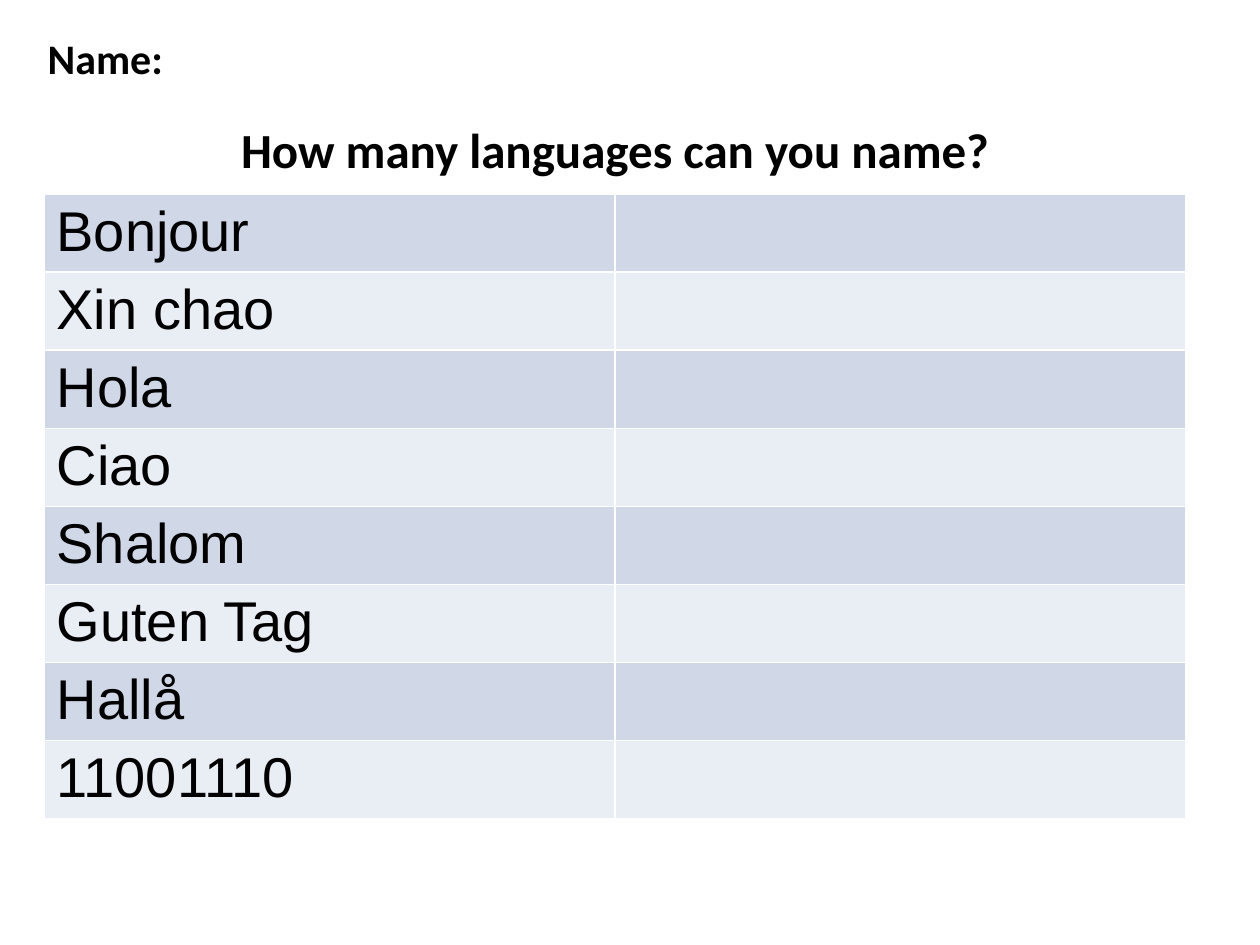
from pptx import Presentation
from pptx.dml.color import RGBColor
from pptx.enum.text import MSO_AUTO_SIZE, PP_ALIGN
from pptx.util import Inches, Pt

COLORS = {"text": "000000", "dark": "D0D8E8", "light": "E9EDF4"}
GREETINGS = ["Bonjour", "Xin chao", "Hola", "Ciao", "Shalom",
             "Guten Tag", "Hallå", "11001110"]


def write(tf, text, size, font, bold):
    tf.text = text
    p = tf.paragraphs[0]
    r = p.runs[0]
    r.font.size = Pt(size)
    r.font.name = font
    r.font.bold = bold
    r.font.color.rgb = RGBColor.from_string(COLORS["text"])
    return p


prs = Presentation()
prs.slide_width = Inches(10)
prs.slide_height = Inches(7.5)
s = prs.slides.add_slide(prs.slide_layouts[6])

rows = len(GREETINGS) + 1
row_height = Inches(0.62)
table = s.shapes.add_table(rows, 2, Inches(0.35), Inches(0.92),
                           Inches(9.06), row_height * rows).table
for row in table.rows:
    row.height = row_height

title = table.cell(0, 0)
title.merge(table.cell(0, 1))
title.fill.background()
p = write(title.text_frame, "How many languages can you name?", 28, "Calibri", True)
p.alignment = PP_ALIGN.CENTER

for i, greeting in enumerate(GREETINGS, start=1):
    write(table.cell(i, 0).text_frame, greeting, 32, "Arial", False)
    for cell in table.rows[i].cells:
        cell.fill.solid()
        cell.fill.fore_color.rgb = RGBColor.from_string(
            COLORS["dark" if i % 2 else "light"])

sp = s.shapes.add_textbox(Inches(0.28), Inches(0.21), Inches(2.68), Inches(0.5))
tf = sp.text_frame
tf.word_wrap = True
tf.auto_size = MSO_AUTO_SIZE.SHAPE_TO_FIT_TEXT
write(tf, "Name:", 24, "Calibri", True)

prs.save("out.pptx")
